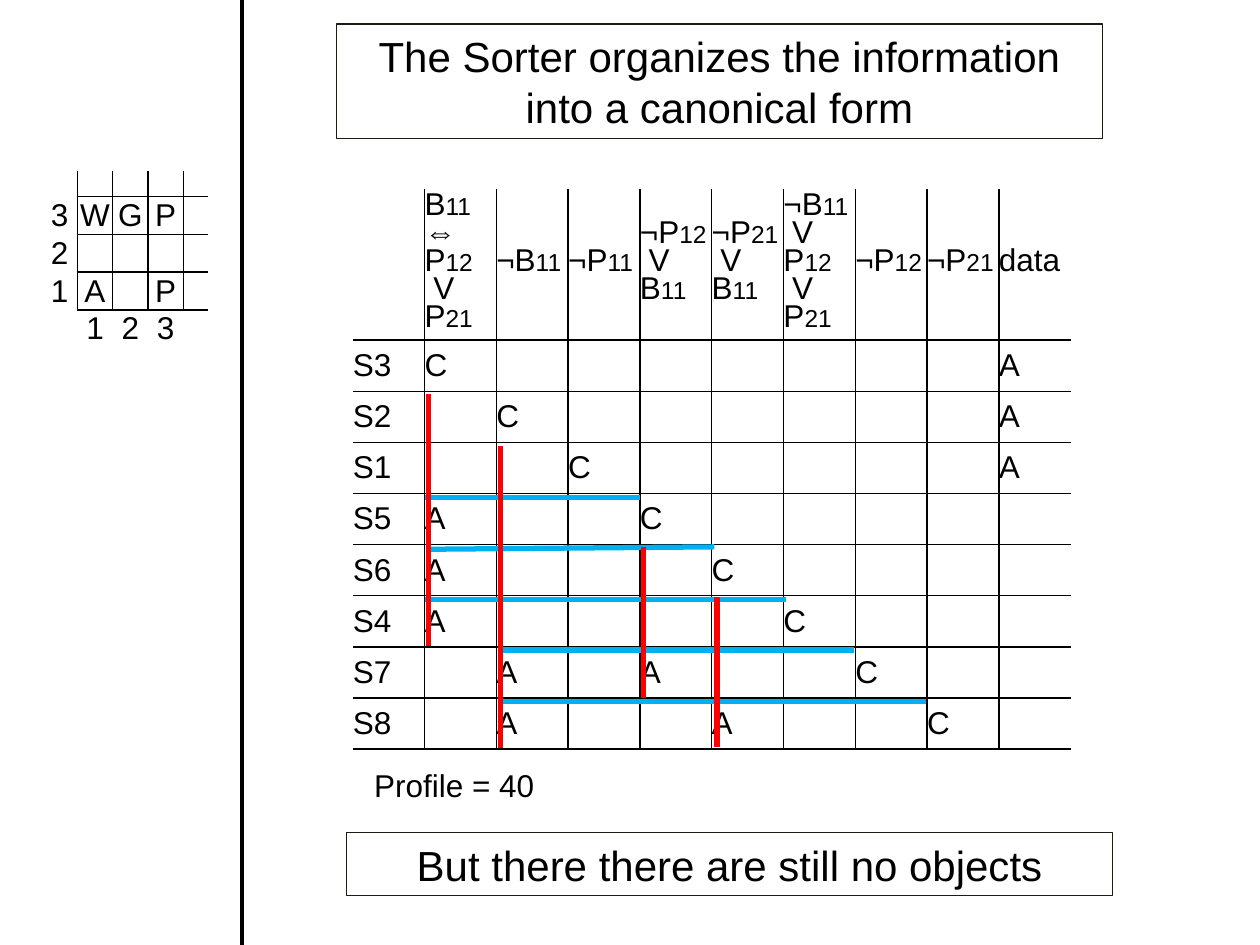
import lxml.etree
import pptx
import pptx.dml.color
import pptx.enum.shapes
import pptx.enum.text
import pptx.oxml.ns
import pptx.util

Pt = pptx.util.Pt
qn = pptx.oxml.ns.qn
CENTER = pptx.enum.text.PP_ALIGN.CENTER
MIDDLE = pptx.enum.text.MSO_ANCHOR.MIDDLE

BLACK, BLUE, RED, FRAME = "000000", "00B0F0", "FF0000", "1E1C11"
FONT = "Arial"

HEADERS = [
    ["B11", "⇔", "P12", " V", "P21"],
    ["¬B11"],
    ["¬P11"],
    ["¬P12", " V", "B11"],
    ["¬P21", " V", "B11"],
    ["¬B11", " V", "P12", " V", "P21"],
    ["¬P12"],
    ["¬P21"],
    ["data"],
]
# Each sentence with the columns of its antecedents; its C is on the diagonal
SENTENCES = [("S3", [9]), ("S2", [9]), ("S1", [9]), ("S5", [1]),
             ("S6", [1]), ("S4", [1]), ("S7", [2, 4]), ("S8", [2, 5])]
WORLD = ["", "3WGP", "2", "1A P", " 123"]

# Start and end points of the marker lines
BLUE_LINES = [
    (242.6, 284.4, 365.8, 284.4),
    (243.4, 313.9, 408.2, 312.5),
    (242.6, 342.7, 449.3, 342.7),
    (284.4, 371.5, 488.2, 371.5),
    (284.4, 401, 529.2, 401),
]
RED_LINES = [
    (409.7, 341.3, 409.7, 427),
    (367.9, 312.5, 367.9, 398.9),
    (285.8, 254.9, 285.8, 427.7),
    (244.8, 225.4, 244.8, 369.4),
]


def color(value):
    return pptx.dml.color.RGBColor.from_string(value)


def format_paragraph(paragraph, size, alignment=None):
    paragraph.font.name = FONT
    paragraph.font.size = Pt(size)
    paragraph.font.color.rgb = color(BLACK)
    if alignment is not None:
        paragraph.alignment = alignment


def set_border(properties, position, side, visible):
    border = lxml.etree.Element(qn("a:ln" + side), w=str(Pt(1)))
    if visible:
        fill = lxml.etree.SubElement(border, qn("a:solidFill"))
        lxml.etree.SubElement(fill, qn("a:srgbClr"), val=BLACK)
    else:
        lxml.etree.SubElement(border, qn("a:noFill"))
    properties.insert(position, border)


def add_grid(slide, left, top, widths, heights, ruled_rows, first_ruled_column):
    """Add an unfilled table with inner rules and a rule below each ruled row."""
    table = slide.shapes.add_table(
        len(heights), len(widths), Pt(left), Pt(top),
        Pt(sum(widths)), Pt(sum(heights))).table
    table.first_row = table.horz_banding = False
    for column, width in zip(table.columns, widths):
        column.width = Pt(width)
    for row, height in zip(table.rows, heights):
        row.height = Pt(height)

    for row in range(len(heights)):
        for column in range(len(widths)):
            cell = table.cell(row, column)
            cell.margin_left = cell.margin_right = 0
            cell.margin_top = cell.margin_bottom = 0
            cell.vertical_anchor = MIDDLE
            cell.fill.background()
            ruled = row < ruled_rows
            across = column >= first_ruled_column
            sides = [
                ("L", ruled and column > 0),
                ("R", ruled and column < len(widths) - 1),
                ("T", across and 0 < row <= ruled_rows),
                ("B", across and ruled),
            ]
            for position, (side, visible) in enumerate(sides):
                set_border(cell._tc.get_or_add_tcPr(), position, side, visible)
            # A small size keeps empty cells from stretching their row
            lxml.etree.SubElement(
                cell.text_frame.paragraphs[0]._p, qn("a:endParaRPr"), sz="1000")
    return table


def write_cell(cell, text, alignment=None):
    cell.text_frame.text = text
    format_paragraph(cell.text_frame.paragraphs[0], 18, alignment)


def write_formula(cell, lines):
    """Write one symbol per line, with its index in a smaller size."""
    cell.text_frame.text = "\n".join(lines)
    for paragraph, line in zip(cell.text_frame.paragraphs, lines):
        format_paragraph(paragraph, 18)
        paragraph.line_spacing = Pt(16)
        symbol = line.rstrip("0123456789")
        paragraph.runs[0].text = symbol
        paragraph.runs[0].font.size = Pt(18)
        if symbol != line:
            index = paragraph.add_run()
            index.text = line[len(symbol):]
            index.font.size = Pt(14)


def add_line(slide, points, line_color, width):
    connector = slide.shapes.add_connector(
        pptx.enum.shapes.MSO_CONNECTOR.STRAIGHT, *[Pt(value) for value in points])
    connector.line.color.rgb = color(line_color)
    connector.line.width = Pt(width)
    properties = connector._element.spPr
    lxml.etree.SubElement(properties, qn("a:effectLst"))


def format_framed_text(shape, box, text):
    shape.left, shape.top, shape.width, shape.height = [Pt(value) for value in box]
    shape.fill.background()
    shape.line.color.rgb = color(FRAME)
    shape.line.width = Pt(0.75)
    frame = shape.text_frame
    frame.word_wrap = True
    frame.auto_size = pptx.enum.text.MSO_AUTO_SIZE.SHAPE_TO_FIT_TEXT
    frame.vertical_anchor = MIDDLE
    frame.text = text
    format_paragraph(frame.paragraphs[0], 24, CENTER)


def add_label(slide, box, text):
    frame = slide.shapes.add_textbox(*[Pt(value) for value in box]).text_frame
    frame.margin_left = frame.margin_right = 0
    frame.margin_top = frame.margin_bottom = 0
    frame.word_wrap = True
    frame.text = text
    format_paragraph(frame.paragraphs[0], 18)


def main():
    presentation = pptx.Presentation()
    presentation.slide_width, presentation.slide_height = Pt(720), Pt(540)
    slide = presentation.slides.add_slide(presentation.slide_layouts[5])

    # Title
    format_framed_text(slide.shapes.title, (192.2, 13.7, 437.8, 65.5),
                       "The Sorter organizes the information into a canonical form")

    # Sorted matrix of sentences
    matrix = add_grid(slide, 201.6, 108, [41.04] * 10, [86.4] + [29.2] * 8, 9, 0)
    for column, lines in enumerate(HEADERS, start=1):
        write_formula(matrix.cell(0, column), lines)
    for row, (name, antecedents) in enumerate(SENTENCES, start=1):
        write_cell(matrix.cell(row, 0), name)
        write_cell(matrix.cell(row, row), "C")
        for column in antecedents:
            write_cell(matrix.cell(row, column), "A")

    # Map of the world
    world = add_grid(slide, 24, 97.9, [20.2] * 4 + [14.4], [14.4] + [20.2] * 4, 4, 1)
    for row, symbols in enumerate(WORLD):
        for column, symbol in enumerate(symbols):
            if symbol != " ":
                write_cell(world.cell(row, column), symbol, CENTER)

    # Marker lines and divider
    for points in BLUE_LINES:
        add_line(slide, points, BLUE, 3)
    for points in RED_LINES:
        add_line(slide, points, RED, 3)
    add_line(slide, (138.2, 0, 138.2, 540), BLACK, 2)

    # Profile and conclusion
    add_label(slide, (213.8, 437.8, 108, 23.8), "Profile = 40")
    conclusion = slide.shapes.add_shape(
        pptx.enum.shapes.MSO_SHAPE.RECTANGLE, 0, 0, Pt(1), Pt(1))
    conclusion.shadow.inherit = False
    format_framed_text(conclusion, (198, 475.9, 437.8, 36),
                       "But there there are still no objects")

    presentation.save("out.pptx")


if __name__ == "__main__":
    main()
